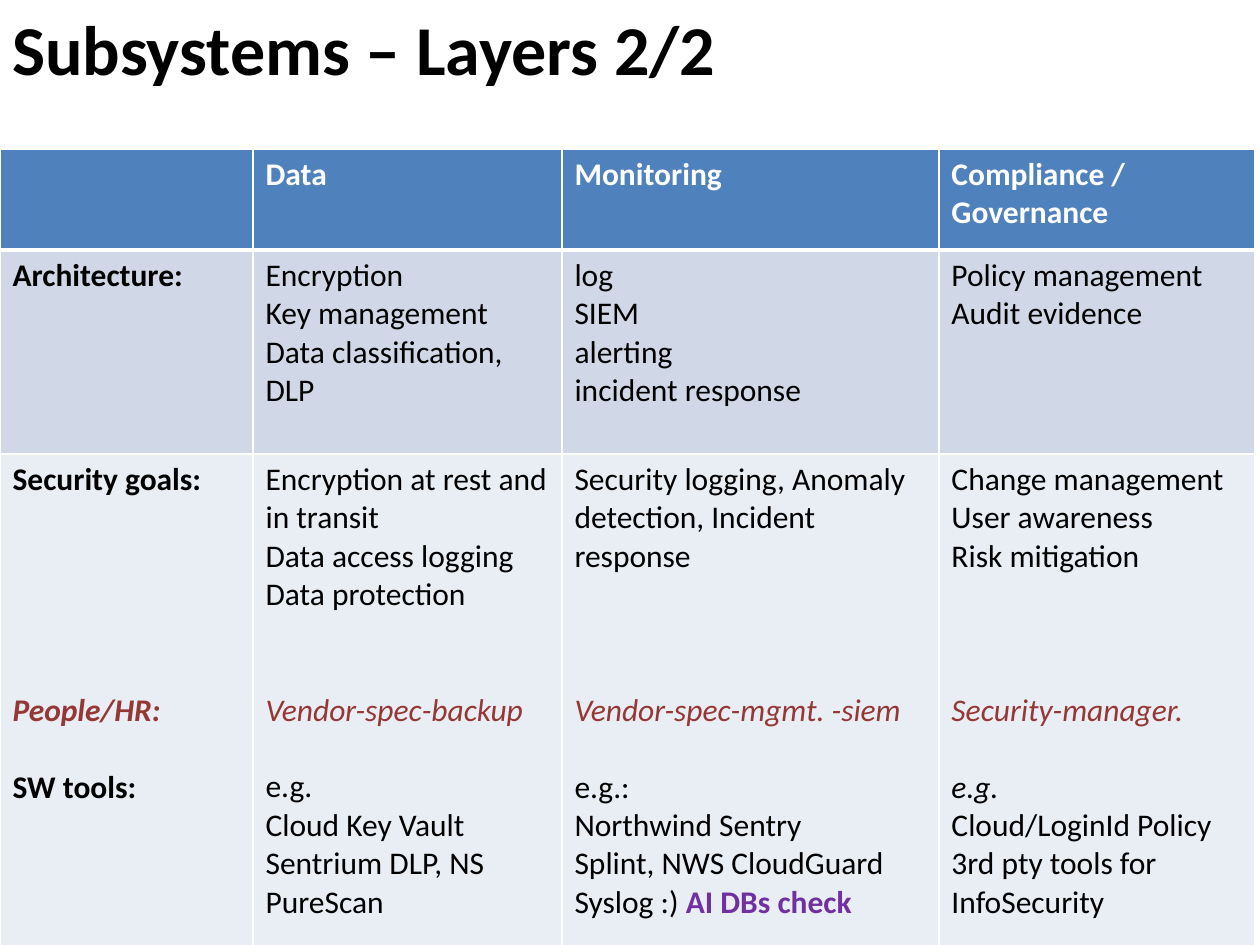
from lxml.etree import SubElement
from pptx import Presentation
from pptx.dml.color import RGBColor as RGB
from pptx.enum.text import MSO_ANCHOR as Anchor
from pptx.oxml.ns import qn
from pptx.util import Emu, Pt

PX = 914400 // 126
LINE = 22  # height of one 18 pt line, in points
BLACK, WHITE, RED, PURPLE = "000000", "FFFFFF", "953735", "7030A0"


def style(font, color, bold=False, italic=False, size=18):
    font.name, font.size = "Calibri", Pt(size)
    font.bold, font.italic = bold, italic
    font.color.rgb = RGB.from_string(color)


def border(cell, side, width):
    ln = SubElement(cell._tc.get_or_add_tcPr(), qn("a:" + side), w=str(Pt(width)))
    fill = SubElement(ln, qn("a:solidFill"))
    SubElement(fill, qn("a:srgbClr"), val=WHITE)


prs = Presentation()
prs.slide_width, prs.slide_height = Emu(1260 * PX), Emu(945 * PX)
s = prs.slides.add_slide(prs.slide_layouts[6])

# Title
tf = s.shapes.add_textbox(0, 0, 1198 * PX, 96 * PX).text_frame
tf.word_wrap = True
tf.vertical_anchor = Anchor.MIDDLE
p = tf.paragraphs[0]
p.text = "Subsystems – Layers 2/2"
style(p.font, BLACK, bold=True, size=40)

# Cell contents: paragraphs of (blank lines before, text, colour, bold, italic)
header = [[(0, text, WHITE, True, False)] if text else []
          for text in ("", "Data", "Monitoring", "Compliance / Governance")]

architecture = [[(0, "Architecture:", BLACK, True, False)]]
for text in ("Encryption\nKey management\nData classification, DLP",
             "log\nSIEM\nalerting\nincident response",
             "Policy management\nAudit evidence"):
    architecture.append([(0, text, BLACK, False, False)])

goals = [[(0, "Security goals:", BLACK, True, False),
          (5, "People/HR:", RED, True, True),
          (1, "SW tools:", BLACK, True, False)]]
for aims, gap, role, intro, tools in (
    (["Encryption at rest and in transit", "Data access logging", "Data protection"],
     2, "Vendor-spec-backup", "e.g.",
     ["Cloud Key Vault", "Sentrium DLP, NS PureScan"]),
    (["Security logging, Anomaly detection, Incident response"],
     3, "Vendor-spec-mgmt. -siem", "e.g.:",
     ["Northwind Sentry", "Splint, NWS CloudGuard", "Syslog :) "]),
    (["Change management\nUser awareness", "Risk mitigation"],
     3, "Security-manager.", "e.g.",
     ["Cloud/LoginId Policy", "3rd pty tools for InfoSecurity"]),
):
    last_column = role == "Security-manager."
    goals.append([(0, aim, BLACK, False, False) for aim in aims]
                 + [(gap, role, RED, False, True),
                    (1, intro, BLACK, False, last_column)]
                 + [(0, tool, BLACK, False, False) for tool in tools])

# Table
rows = [(101, "4F81BD", header), (204, "D0D8E8", architecture), (509, "E9EDF4", goals)]
widths = [253, 309, 377, 316]
table = s.shapes.add_table(len(rows), len(widths), 0, 149 * PX, sum(widths) * PX,
                           sum(row[0] for row in rows) * PX).table
table.horz_banding = False
for col, width in zip(table.columns, widths):
    col.width = Emu(width * PX)

for i, (height, color, contents) in enumerate(rows):
    table.rows[i].height = Emu(height * PX)
    for j, paragraphs in enumerate(contents):
        cell = table.cell(i, j)
        for side in ("lnL", "lnR", "lnT", "lnB"):
            heavy = (i, side) in ((0, "lnB"), (1, "lnT"))
            border(cell, side, 3 if heavy else 1)
        cell.fill.solid()
        cell.fill.fore_color.rgb = RGB.from_string(color)
        tf = cell.text_frame
        for k, (gap, text, ink, bold, italic) in enumerate(paragraphs):
            p = tf.add_paragraph() if k else tf.paragraphs[0]
            p.text = text
            if gap:
                p.space_before = Pt(gap * LINE)
            style(p.font, ink, bold, italic)

# Highlight after the last monitoring tool
r = table.cell(2, 2).text_frame.paragraphs[-1].add_run()
r.text = "AI DBs check"
style(r.font, PURPLE, bold=True)

prs.save("out.pptx")
